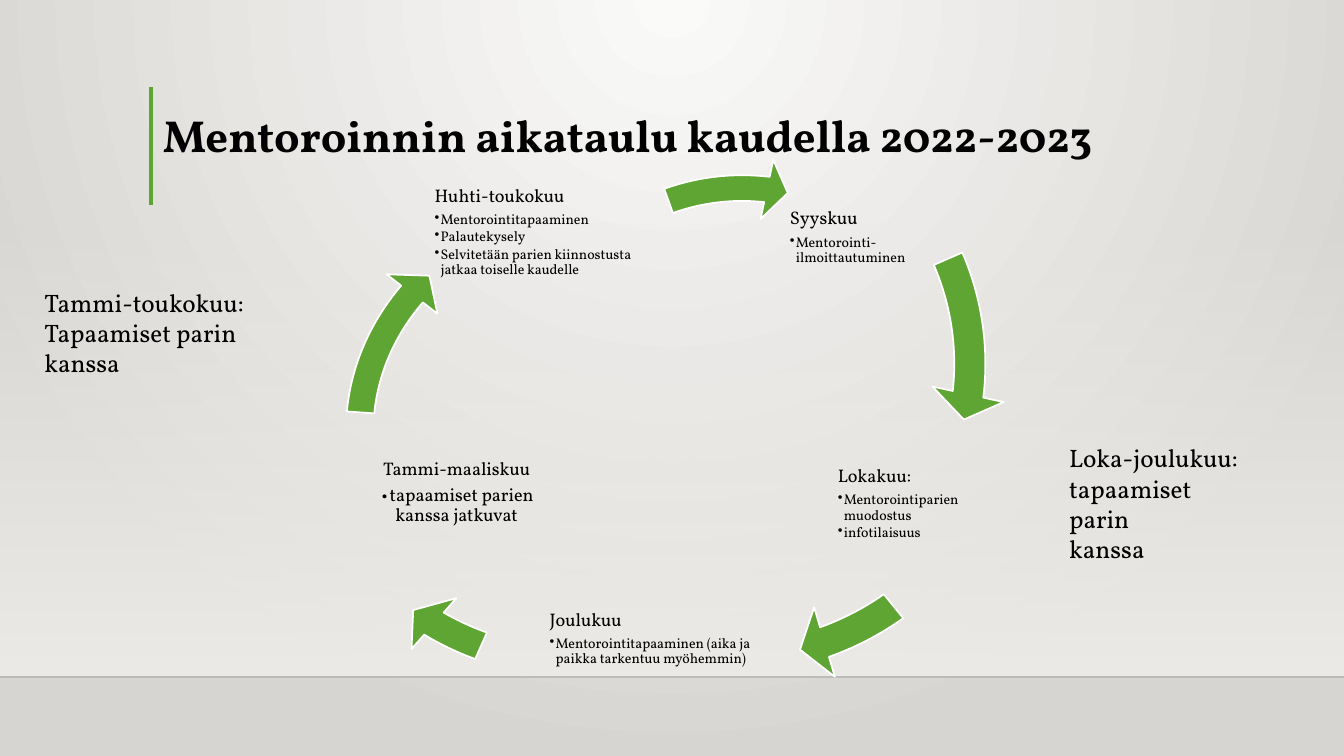
from lxml import etree
from pptx import Presentation, util as u
from pptx.dml import color
from pptx.enum import shapes, text
from pptx.oxml import ns

FONT = "Vollkorn"
INK = "000000"
GREEN = "5FA534"
WHITE = "FFFFFF"
HAZE = "EDEBE7"
COLUMNS, ROWS = 160, 90


def rgb(value):
    return color.RGBColor.from_string(value)


def add_element(parent, tag, **attributes):
    return etree.SubElement(parent, ns.qn(tag), attributes)


def set_opacity(element, percent):
    """Apply an opacity to the first plain colour found under element."""
    colour = element.find(".//" + ns.qn("a:srgbClr"))
    add_element(colour, "a:alpha", val=str(percent * 1000))


class CycleSlide:
    """Draws on one slide; lengths are columns and rows of a 160 by 90 grid."""

    def __init__(self, presentation):
        self.column = presentation.slide_width / COLUMNS
        self.row = presentation.slide_height / ROWS
        self.slide = presentation.slides.add_slide(presentation.slide_layouts[6])
        self.shapes = self.slide.shapes

    def place(self, left, top, width, height):
        return (round(left * self.column), round(top * self.row),
                round(width * self.column), round(height * self.row))

    def gradient(self, fill, colours):
        fill.gradient()
        for stop, value in zip(fill.gradient_stops, colours):
            stop.color.rgb = rgb(value)

    def background(self, inner, outer):
        """Radial gradient centred on the top edge."""
        self.gradient(self.slide.background.fill, (inner, outer))
        gradient = self.slide.element.find(".//" + ns.qn("a:gradFill"))
        gradient.remove(gradient.find(ns.qn("a:lin")))
        path = add_element(gradient, "a:path", path="circle")
        add_element(path, "a:fillToRect", l="43000", t="0", r="43000", b="100000")

    def haze(self, *box):
        """Rectangle fading from clear at the top to solid at the bottom."""
        shape = self.shapes.add_shape(shapes.MSO_SHAPE.RECTANGLE, *self.place(*box))
        shape.shadow.inherit = False
        shape.line.fill.background()
        self.gradient(shape.fill, (HAZE, HAZE))
        shape.fill.gradient_angle = 270
        set_opacity(shape.element.spPr, 0)

    def rule(self, left, top, width, height, colour, points, opacity=100):
        x, y, dx, dy = self.place(left, top, width, height)
        line = self.shapes.add_connector(
            shapes.MSO_CONNECTOR.STRAIGHT, x, y, x + dx, y + dy)
        line.line.color.rgb = rgb(colour)
        line.line.width = u.Pt(points)
        properties = line.element.spPr
        add_element(properties, "a:effectLst")
        if opacity < 100:
            set_opacity(properties, opacity)

    def arrow(self, box, start, end):
        """Curved arrow between two angles in degrees, clockwise from the right."""
        shape = self.shapes.add_shape(
            shapes.MSO_SHAPE.CIRCULAR_ARROW, *self.place(*box))
        shape.shadow.inherit = False
        shape.fill.solid()
        shape.fill.fore_color.rgb = rgb(GREEN)
        shape.line.color.rgb = rgb(WHITE)
        shape.line.width = u.Pt(1.25)
        degree = 0.6
        values = (0.052, 5.6 * degree, end * degree, start * degree, 0.061)
        for index, value in enumerate(values):
            shape.adjustments[index] = value

    def text_frame(self, box, anchor, inset=None):
        frame = self.shapes.add_textbox(*self.place(*box)).text_frame
        frame.word_wrap = True
        frame.vertical_anchor = anchor
        if inset is not None:
            frame.margin_left = frame.margin_right = u.Inches(inset)
            frame.margin_top = frame.margin_bottom = u.Inches(inset)
        return frame

    def paragraph(self, frame, words, size, bold=False, bullet=False,
                  spacing=1.0, after=0, centred=False):
        first = frame.paragraphs[0]
        paragraph = frame.add_paragraph() if first.runs else first
        paragraph.add_run().text = words
        if bullet:
            properties = paragraph._p.get_or_add_pPr()
            indent = u.Inches(0.06)
            properties.set("marL", str(indent))
            properties.set("indent", str(-indent))
            add_element(properties, "a:buChar", char="•")
        paragraph.alignment = text.PP_ALIGN.CENTER if centred else text.PP_ALIGN.LEFT
        paragraph.line_spacing = spacing
        paragraph.space_after = u.Pt(after)
        font = paragraph.font
        font.name, font.size, font.bold = FONT, u.Pt(size), bold
        font.color.rgb = rgb(INK)

    def title(self, box, words):
        frame = self.text_frame(box, text.MSO_ANCHOR.BOTTOM)
        self.paragraph(frame, words, 32, bold=True, spacing=0.9)

    def stage(self, box, headings, bullets=(), centred=False):
        frame = self.text_frame(box, text.MSO_ANCHOR.MIDDLE, inset=0.02)
        for words in headings:
            self.paragraph(frame, words, 13, spacing=0.9, after=4.55, centred=centred)
        for words in bullets:
            self.paragraph(frame, words, 10, bullet=True, spacing=0.9, after=1.5)

    def note(self, box, lines):
        frame = self.text_frame(box, text.MSO_ANCHOR.TOP)
        for words in lines:
            self.paragraph(frame, words, 18)


def main():
    presentation = Presentation()
    presentation.slide_width = u.Inches(13.33)
    presentation.slide_height = u.Inches(7.5)
    cycle = CycleSlide(presentation)

    cycle.background("FAFAF9", "D7D5D2")
    cycle.haze(0, 26.4, COLUMNS, 54)
    cycle.rule(0, 80.6, COLUMNS, 0, INK, 1, opacity=20)
    cycle.rule(18, 10.4, 0, 14, GREEN, 3)
    cycle.title((18.2, 6.1, 126, 13.8), "Mentoroinnin aikataulu kaudella 2022-2023")

    cycle.stage((93.8, 20.4, 15.7, 15.7), ["Syyskuu"],
                ["Mentorointi-ilmoittautuminen"])
    cycle.stage((99.5, 52.1, 15.7, 15.7), ["Lokakuu:"],
                ["Mentorointiparien muodostus", "infotilaisuus"])
    cycle.stage((65.2, 68.2, 28.7, 15.7), ["Joulukuu"],
                ["Mentorointitapaaminen (aika ja paikka tarkentuu myöhemmin)"])
    cycle.stage((42.6, 50.8, 23.5, 15.7),
                ["Tammi-maaliskuu", "∙tapaamiset parien kanssa jatkuvat"],
                centred=True)
    cycle.stage((51.5, 20.9, 28.1, 13.4), ["Huhti-toukokuu"],
                ["Mentorointitapaaminen", "Palautekysely",
                 "Selvitetään parien kiinnostusta jatkaa toiselle kaudelle"])

    arrows = [
        ((48.6, 7.6, 71.2, 71.4), 336.43, 6.69),
        ((48.8, 12.1, 75, 70.7), 50.93, 67.76),
        ((33.1, 16.9, 72.2, 66.1), 113.88, 125.82),
        ((39, 19.9, 72, 62.8), 183.93, 212.14),
        ((58.9, 18.8, 58.9, 58.9), 250.22, 276.56),
    ]
    for box, start, end in arrows:
        cycle.arrow(box, start, end)

    cycle.note((126.1, 52.1, 23.9, 12.1),
               ["Loka-joulukuu:", "tapaamiset parin", "kanssa"])
    cycle.note((4.1, 33.6, 32.4, 8.5),
               ["Tammi-toukokuu:", "Tapaamiset parin kanssa"])
    presentation.save("out.pptx")


if __name__ == "__main__":
    main()
